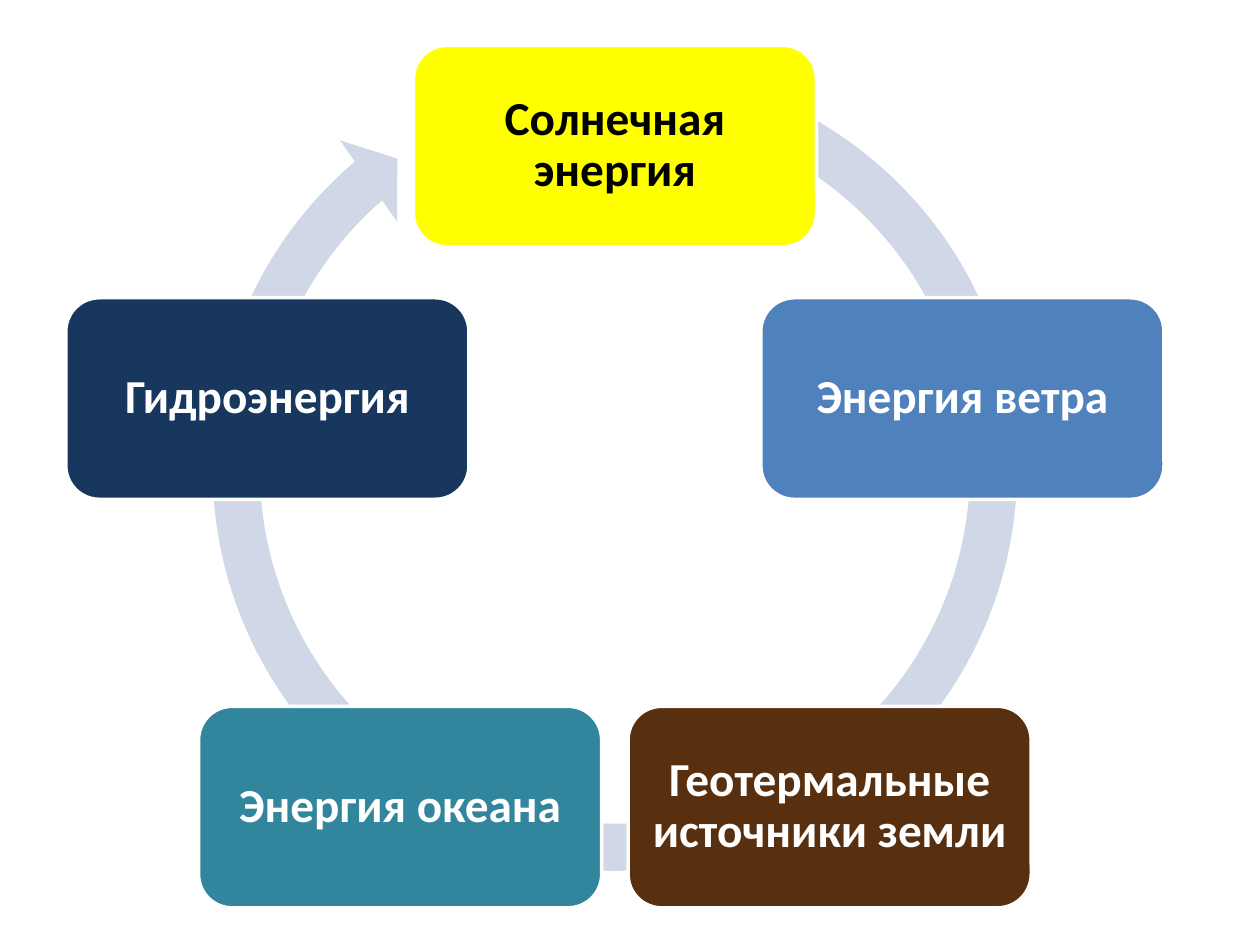
import math
from pptx import Presentation
from pptx.dml.color import RGBColor
from pptx.enum import shapes, text
from pptx.util import Pt

NODES = [
    ("Солнечная энергия", "FFFF00", "000000"),
    ("Энергия ветра", "4F81BD", "FFFFFF"),
    ("Геотермальные источники земли", "59300F", "FFFFFF"),
    ("Энергия океана", "31859C", "FFFFFF"),
    ("Гидроэнергия", "17375E", "FFFFFF"),
]
NODE_WIDTH, NODE_HEIGHT = 230.4, 115.2
ORBIT_RADIUS = 208.8
ORBIT_DROP = 24.5
ARROW_ADJUSTMENTS = (0.055, 3.307, 137.65, 173.93, 0.058)


def color(value):
    return RGBColor.from_string(value)


def add_filled_shape(slide, kind, left, top, width, height, fill):
    shape = slide.shapes.add_shape(kind, Pt(left), Pt(top), Pt(width), Pt(height))
    shape.shadow.inherit = False
    shape.fill.solid()
    shape.fill.fore_color.rgb = color(fill)
    shape.line.fill.background()
    return shape


def write_text(shape, words, size=27, font="Calibri", fill="FFFFFF", bold=True, inset=7.5):
    frame = shape.text_frame
    frame.word_wrap = True
    frame.vertical_anchor = text.MSO_ANCHOR.MIDDLE
    frame.margin_left = frame.margin_right = Pt(inset)
    frame.margin_top = frame.margin_bottom = Pt(inset)
    paragraph = frame.paragraphs[0]
    paragraph.alignment = text.PP_ALIGN.CENTER
    paragraph.line_spacing = 0.9
    run = paragraph.add_run()
    run.text = words
    run.font.size = Pt(size)
    run.font.name = font
    run.font.bold = bold
    run.font.color.rgb = color(fill)


def add_node(slide, left, top, width, height, words, fill, text_fill):
    node = add_filled_shape(slide, shapes.MSO_SHAPE.ROUNDED_RECTANGLE,
                            left, top, width, height, fill)
    node.line.color.rgb = color("FFFFFF")
    node.line.width = Pt(2)
    write_text(node, words, fill=text_fill)


def add_energy_cycle(slide, left, top, size):
    arrow = add_filled_shape(slide, shapes.MSO_SHAPE.CIRCULAR_ARROW,
                             left, top, size, size, "D0D8E8")
    for index, value in enumerate(ARROW_ADJUSTMENTS):
        arrow.adjustments[index] = value

    center_x = left + size / 2
    center_y = top + size / 2 + ORBIT_DROP
    for index, (words, fill, text_fill) in enumerate(NODES):
        angle = 2 * math.pi * index / len(NODES)
        node_left = center_x + ORBIT_RADIUS * math.sin(angle) - NODE_WIDTH / 2
        node_top = center_y - ORBIT_RADIUS * math.cos(angle) - NODE_HEIGHT / 2
        add_node(slide, node_left, node_top, NODE_WIDTH, NODE_HEIGHT,
                 words, fill, text_fill)


def main():
    presentation = Presentation()
    presentation.slide_width = Pt(720)
    presentation.slide_height = Pt(540)
    slide = presentation.slides.add_slide(presentation.slide_layouts[6])
    add_energy_cycle(slide, 106.6, 23, 489.6)
    presentation.save("out.pptx")


if __name__ == "__main__":
    main()
